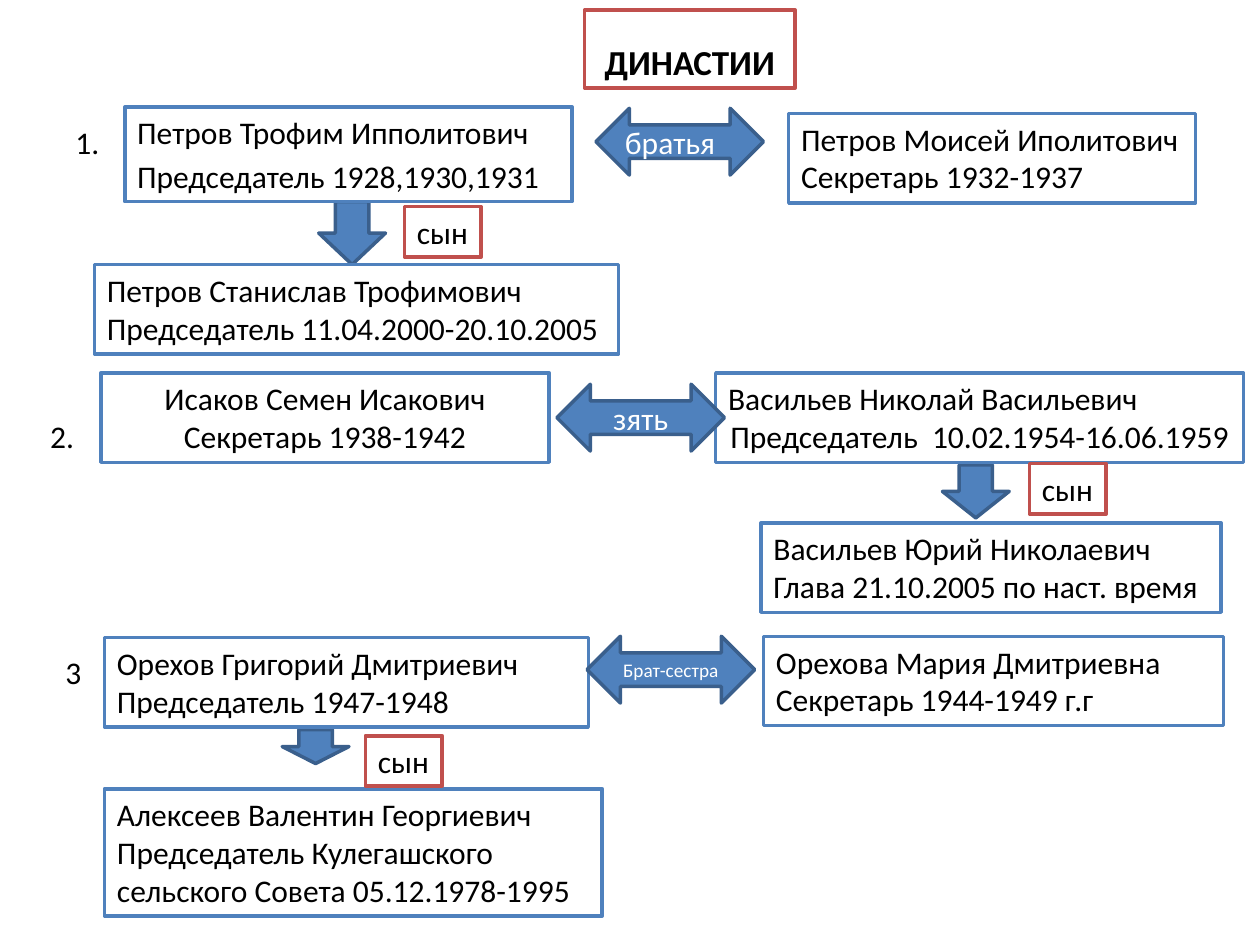
from pptx import Presentation
from pptx import util as u
from pptx.dml.color import RGBColor
from pptx.enum import shapes, text

THEME = {
    "font": "Calibri", "title": 20, "body": 18, "small": 11, "line": 2,
    "paper": "FFFFFF", "ink": "000000", "blue": "4F81BD",
    "navy": "3A5F8C", "red": "C0504D",
}
COLUMNS, ROWS = 100, 75
LEFT, CENTER = text.PP_ALIGN.LEFT, text.PP_ALIGN.CENTER
TOP, MIDDLE, BOTTOM = (text.MSO_ANCHOR.TOP, text.MSO_ANCHOR.MIDDLE,
                       text.MSO_ANCHOR.BOTTOM)
GROW, FIXED = text.MSO_AUTO_SIZE.SHAPE_TO_FIT_TEXT, text.MSO_AUTO_SIZE.NONE
RECT = shapes.MSO_SHAPE.RECTANGLE
ARROW_WIDTH, TIE_SIZE, SON_SIZE, NUMBER_HEIGHT = 5.3, (13.3, 5.3), (6.1, 4), 4
PERSON_HEIGHT = {2: 7.1, 3: 10.1}

TITLE = ("ДИНАСТИИ", (46.4, 0.8, 16.7, 6.2))
FOUNDER = (["Петров Трофим Ипполитович", "Председатель 1928,1930,1931"],
           (9.9, 8.5, 35.5, 7.5))
PEOPLE = [
    (["Петров Моисей Иполитович", "Секретарь 1932-1937"],
     (62.6, 9, 32.3), 2, [LEFT, LEFT]),
    (["Петров Станислав Трофимович", "Председатель 11.04.2000-20.10.2005"],
     (7.5, 21, 41.6), 2, [LEFT, LEFT]),
    (["Васильев Николай Васильевич", "Председатель  10.02.1954-16.06.1959"],
     (56.8, 29.6, 41.9), 2, [LEFT, CENTER]),
    (["Исаков Семен Исакович", "Секретарь 1938-1942"],
     (8, 29.6, 35.6), 2, [CENTER, CENTER]),
    (["Васильев Юрий Николаевич", "Глава 21.10.2005 по наст. время"],
     (60.4, 41.5, 36.5), 2, [LEFT, LEFT]),
    (["Орехов Григорий Дмитриевич", "Председатель 1947-1948"],
     (8.3, 50.6, 38.4), 2, [LEFT, LEFT]),
    (["Орехова Мария Дмитриевна", "Секретарь 1944-1949 г.г"],
     (60.6, 50.5, 36.5), 2, [LEFT, LEFT]),
    (["Алексеев Валентин Георгиевич",
      "Председатель Кулегашского сельского Совета 05.12.1978-1995"],
     (8.3, 62.6, 39.5), 3, [LEFT, LEFT]),
]
TIES = [("братья", (47.3, 8.6), "body", LEFT),
        ("зять", (44.2, 30.5), "body", CENTER),
        ("Брат-сестра", (46.6, 50.5), "small", CENTER)]
DESCENTS = [(25.3, 16, 5), (74.8, 36.9, 4.2), (22.4, 57.9, 2.7)]
SON = "сын"
SON_PLACES = [(32.1, 16.4), (81.7, 36.8), (29, 58.4)]
NUMBERS = [("1.", (5, 9.3, 3.9)), ("2.", (3, 32.6, 3.9)), ("3", (4.2, 51.3, 3.3))]

deck = Presentation()
deck.slide_width, deck.slide_height = u.Inches(10), u.Inches(7.5)
slide = deck.slides.add_slide(deck.slide_layouts[6])


def color(name):
    return RGBColor.from_string(THEME[name])


def place(box):
    column, row = deck.slide_width / COLUMNS, deck.slide_height / ROWS
    return [round(n * unit) for n, unit in zip(box, (column, row) * 2)]


def apply(target, values):
    for name, value in values.items():
        setattr(target, name, value)


def write(holder, lines, aligns, size="body", ink="ink", bold=False,
          before=0, **frame_values):
    frame = holder.text_frame
    apply(frame, {"word_wrap": True, "auto_size": FIXED,
                  "vertical_anchor": TOP, **frame_values})
    for i, (line, align) in enumerate(zip(lines, aligns)):
        paragraph = frame.add_paragraph() if i else frame.paragraphs[0]
        apply(paragraph, {"alignment": align, "space_before": u.Pt(before)})
        run = paragraph.add_run()
        run.text = line
        apply(run.font, {"name": THEME["font"], "size": u.Pt(THEME[size]),
                         "bold": bold})
        run.font.color.rgb = color(ink)


def draw(kind, box, fill="paper", line="blue"):
    figure = slide.shapes.add_shape(kind, *place(box))
    figure.shadow.inherit = False
    figure.fill.solid()
    figure.fill.fore_color.rgb = color(fill)
    figure.line.color.rgb = color(line)
    figure.line.width = u.Pt(THEME["line"])
    return figure


heading, heading_box = TITLE
write(draw(RECT, heading_box, line="red"), [heading], [CENTER], "title",
      bold=True, vertical_anchor=BOTTOM)

for x, y, height in DESCENTS:
    draw(shapes.MSO_SHAPE.DOWN_ARROW, (x, y, ARROW_WIDTH, height), "blue", "navy")

founder_lines, founder_box = FOUNDER
write(draw(RECT, founder_box), founder_lines, [LEFT, LEFT],
      before=THEME["body"] * 0.2)

for lines, box, rows, aligns in PEOPLE:
    write(draw(RECT, (*box, PERSON_HEIGHT[rows])), lines, aligns, auto_size=GROW)

for relation, corner, size, align in TIES:
    tie = draw(shapes.MSO_SHAPE.LEFT_RIGHT_ARROW, (*corner, *TIE_SIZE), "blue", "navy")
    write(tie, [relation], [align], size, "paper", vertical_anchor=MIDDLE)

for corner in SON_PLACES:
    write(draw(RECT, (*corner, *SON_SIZE), line="red"), [SON], [LEFT],
          word_wrap=False, auto_size=GROW)

for number, box in NUMBERS:
    label = slide.shapes.add_textbox(*place((*box, NUMBER_HEIGHT)))
    write(label, [number], [LEFT], auto_size=GROW)

deck.save("out.pptx")
